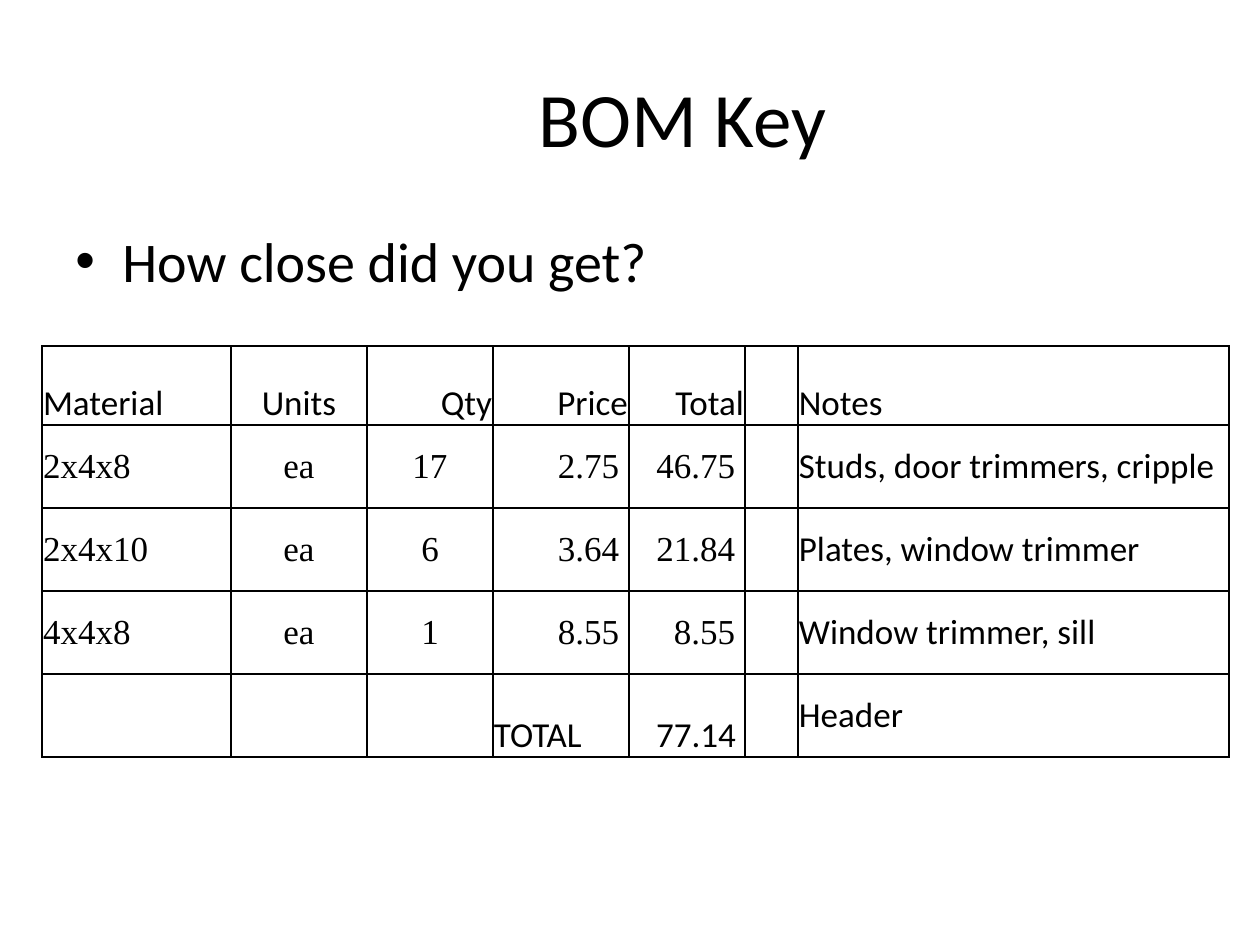
from lxml import etree
from pptx import Presentation
from pptx.dml.color import RGBColor
from pptx.enum.text import MSO_ANCHOR, PP_ALIGN
from pptx.oxml import parse_xml
from pptx.oxml.ns import nsdecls, qn
from pptx.util import Emu, Pt

LEFT, MID, RIGHT = PP_ALIGN.LEFT, PP_ALIGN.CENTER, PP_ALIGN.RIGHT
TOP, CENTER, BASE = MSO_ANCHOR.TOP, MSO_ANCHOR.MIDDLE, MSO_ANCHOR.BOTTOM
BLACK = RGBColor(0, 0, 0)
SANS, SERIF = "Calibri", "Times New Roman"

COLS = [189, 136, 126, 136, 116, 53, 431]
ROWS = [79, 83, 83, 83, 83]
ALIGNS = [LEFT, MID, MID, RIGHT, RIGHT, LEFT, LEFT]
CELLS = [
    ["Material", "Units", "Qty", "Price", "Total", "", "Notes"],
    ["2x4x8", "ea", "17", "2.75 ", "46.75 ", "", "Studs, door trimmers, cripple"],
    ["2x4x10", "ea", "6", "3.64 ", "21.84 ", "", "Plates, window trimmer"],
    ["4x4x8", "ea", "1", "8.55 ", "8.55 ", "", "Window trimmer, sill"],
    ["", "", "", "TOTAL", "77.14 ", "", "Header"],
]


def px(n):
    return Emu(round(n * 914400 / 126))


class Deck:
    """Holds the text style and the current slide."""

    def __init__(self, color):
        self.color = color
        self.show = Presentation()
        self.show.slide_width, self.show.slide_height = px(1260), px(945)
        self.slide = self.show.slides.add_slide(self.show.slide_layouts[6])

    def run(self, para, text, size, font=SANS, align=LEFT):
        para.alignment = align
        run = para.add_run()
        run.text = text
        run.font.size, run.font.name = Pt(size), font
        run.font.color.rgb = self.color

    def text(self, box, text, size, align=LEFT, anchor=TOP):
        frame = self.slide.shapes.add_textbox(*map(px, box)).text_frame
        frame.word_wrap = True
        frame.vertical_anchor = anchor
        para = frame.paragraphs[0]
        self.run(para, text, size, align=align)
        return para

    def bullet(self, box, text, size, indent):
        props = self.text(box, text, size)._p.get_or_add_pPr()
        props.set("marL", str(px(indent)))
        props.set("indent", str(px(-indent)))
        space = etree.SubElement(props, qn("a:spcBef"))
        etree.SubElement(space, qn("a:spcPct")).set("val", "20000")
        etree.SubElement(props, qn("a:buFont")).set("typeface", "Arial")
        etree.SubElement(props, qn("a:buChar")).set("char", "•")

    def border(self, cell, width):
        props = cell._tc.get_or_add_tcPr()
        for i, side in enumerate("LRTB"):
            props.insert(i, parse_xml(
                f'<a:ln{side} {nsdecls("a")} w="{Pt(width)}"><a:solidFill>'
                f'<a:srgbClr val="{self.color}"/></a:solidFill></a:ln{side}>'))

    def cell(self, cell, text, font, align, anchor):
        cell.fill.background()
        self.border(cell, 1)
        cell.margin_left = cell.margin_right = cell.margin_top = px(1)
        cell.margin_bottom = 0
        cell.vertical_anchor = anchor
        if text:
            self.run(cell.text_frame.paragraphs[0], text, 20, font, align)

    def table(self, left, top, cols, rows, cells):
        box = map(px, (left, top, sum(cols), sum(rows)))
        table = self.slide.shapes.add_table(len(rows), len(cols), *box).table
        table.first_row = table.horz_banding = False
        for col, width in zip(table.columns, cols):
            col.width = px(width)
        last = len(rows) - 1
        notes = len(cols) - 1
        for r, height in enumerate(rows):
            table.rows[r].height = px(height)
            for c, text in enumerate(cells[r]):
                body = 0 < r < last
                font = SERIF if body and c < notes else SANS
                align = ALIGNS[c]
                if text == "Qty":
                    align = RIGHT
                elif text == "TOTAL":
                    align = LEFT
                low = r == 0 or (r == last and c < notes)
                self.cell(table.cell(r, c), text, font, align, BASE if low else CENTER)


def main():
    deck = Deck(BLACK)
    deck.text((168, 38, 1029, 158), "BOM Key", 44, MID, CENTER)
    deck.bullet((63, 220, 1134, 116), "How close did you get?", 32, 47)
    deck.table(42, 346, COLS, ROWS, CELLS)
    deck.show.save("out.pptx")


if __name__ == "__main__":
    main()
